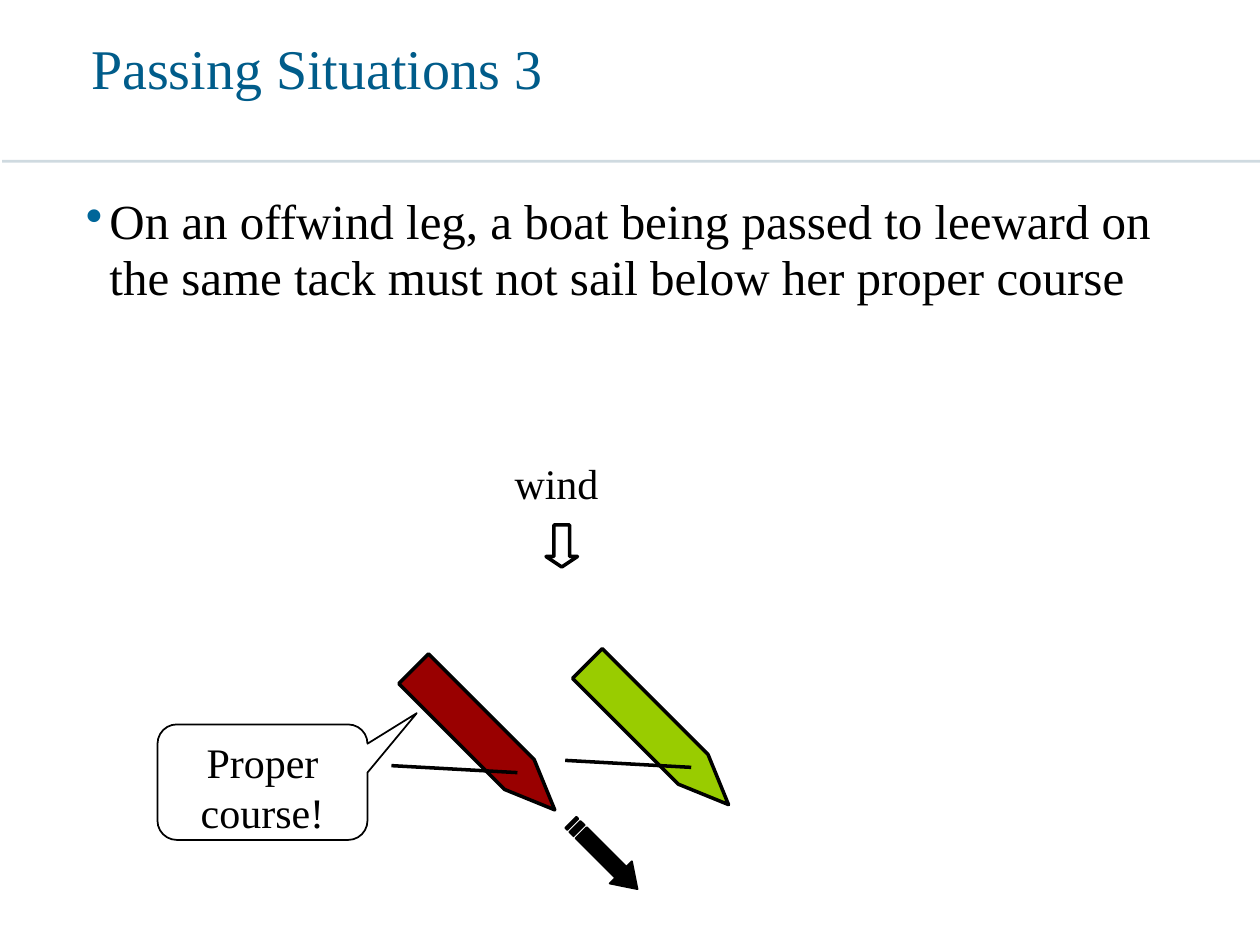
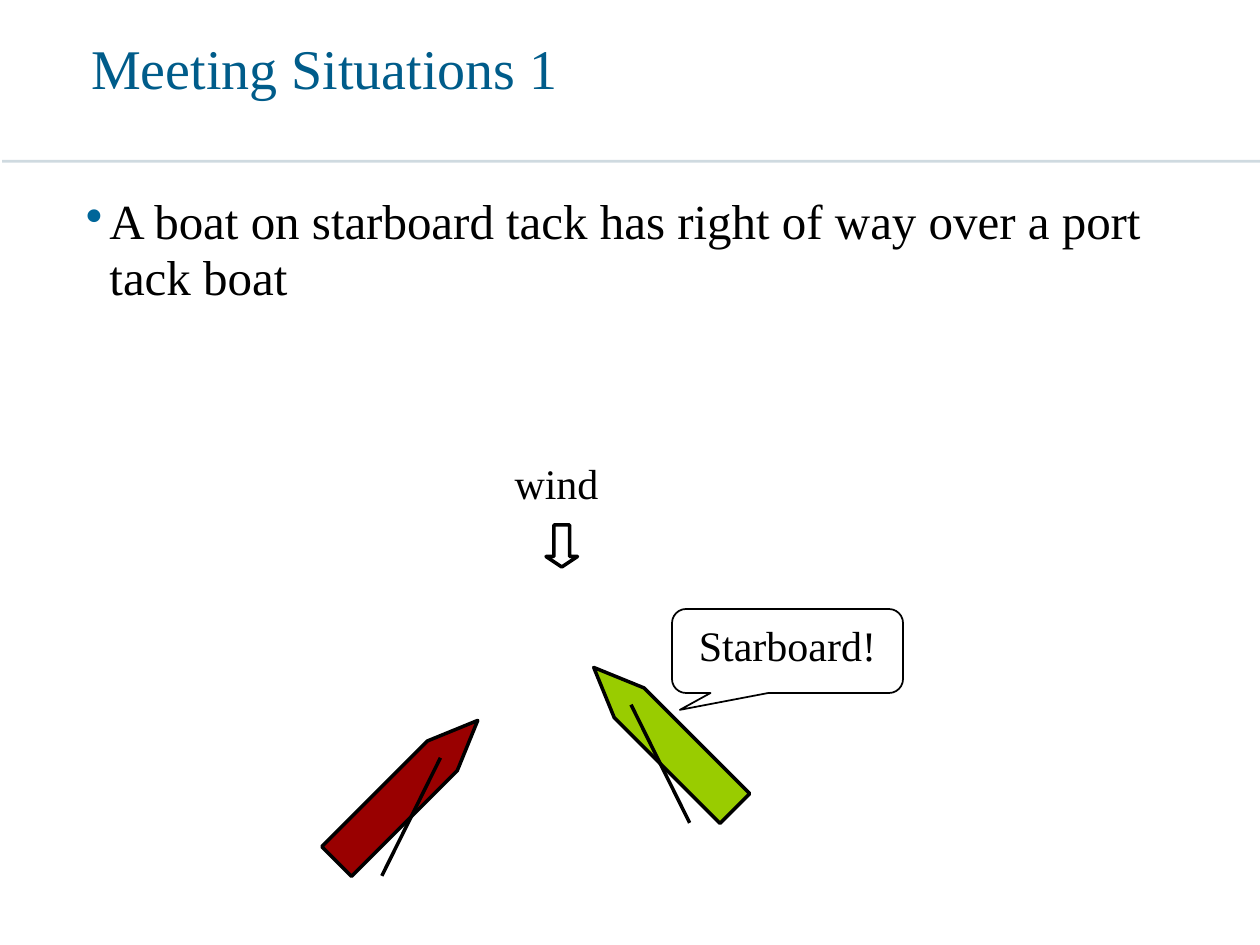
from typing import NamedTuple
from pptx import Presentation
from pptx.dml.color import RGBColor
from pptx.enum.shapes import MSO_SHAPE
from pptx.enum.text import MSO_ANCHOR, PP_ALIGN
from pptx.oxml.ns import qn
from pptx.util import Pt
from lxml.etree import SubElement

HUES = {"title": "005C8A", "bullet": "006699", "rule": "A1B7C3",
        "ink": "000000", "port": "990000", "star": "99CC00"}
FACE = "Times New Roman"
STYLES = {
    "title": {"size": Pt(32), "hue": "title", "para": {"line_spacing": 0.9}},
    "body": {"size": Pt(28), "hue": "ink", "para": {"line_spacing": 0.95}},
    "label": {"size": Pt(24), "hue": "ink", "para": {"alignment": PP_ALIGN.CENTER}},
}
FRAME = {"word_wrap": True, "vertical_anchor": MSO_ANCHOR.TOP,
         "margin_left": Pt(7.2), "margin_right": Pt(7.2),
         "margin_top": Pt(3.6), "margin_bottom": Pt(3.6)}

HULL = (114, 24)
# Sail ends, measured from the corner of the unturned hull
RUN = ((76, 31), (4, 27))
BEAT = ((76, -7), (42.5, 60.5))
BEAT_BACK = tuple((HULL[0] - x, y) for x, y in BEAT)


class Boat(NamedTuple):
    left: float
    top: float
    turn: float
    hue: str
    sail: tuple


class Call(NamedTuple):
    text: str
    box: tuple
    tail: tuple


class Scene(NamedTuple):
    title: str
    rule: str
    boats: tuple
    call: Call
    arrow: tuple = ()


SCENES = (
    Scene("Passing Situations 3",
          "On an offwind leg, a boat being passed to leeward on the same tack "
          "must not sail below her proper course",
          (Boat(319, 407.5, 45, "star", RUN), Boat(219.7, 410.5, 45, "port", RUN)),
          Call("Proper course!", (90, 414, 120, 66), (0.735, -0.598, 0.167)),
          (318.2, 480)),
    Scene("Meeting Situations 1",
          "A boat on starboard tack has right of way over a port tack boat",
          (Boat(175.7, 440, 315, "port", BEAT), Boat(322.6, 409.7, 225, "star", BEAT_BACK)),
          Call("Starboard!", (384, 348, 132, 48), (-0.466, 0.701, 0.167))),
)


def color(name: str) -> RGBColor:
    return RGBColor.from_string(HUES[name])


def write(shape, text: str, style: str):
    """Put one styled paragraph in a shape and return it."""
    look = STYLES[style]
    for key, value in FRAME.items():
        setattr(shape.text_frame, key, value)
    para = shape.text_frame.paragraphs[0]
    for key, value in look["para"].items():
        setattr(para, key, value)
    run = para.add_run()
    run.text = text
    for key, value in {"name": FACE, "size": look["size"]}.items():
        setattr(run.font, key, value)
    run.font.color.rgb = color(look["hue"])
    return para


def add_text(slide, box: tuple, text: str, style: str):
    return write(slide.shapes.add_textbox(*map(Pt, box)), text, style)


def paint(shape, width: float, fill: str = "") -> None:
    shape.shadow.inherit = False
    if fill:
        shape.fill.solid()
        shape.fill.fore_color.rgb = color(fill)
    else:
        shape.fill.background()
    shape.line.color.rgb = color("ink")
    shape.line.width = Pt(width)


def add_shape(slide, kind, box: tuple, adjust: tuple, width: float, fill: str = ""):
    shape = slide.shapes.add_shape(kind, *map(Pt, box))
    for i, value in enumerate(adjust):
        shape.adjustments[i] = value
    paint(shape, width, fill)
    return shape


def add_line(slide, start: tuple, end: tuple, hue: str, width: float):
    line = slide.shapes.add_connector(1, *map(Pt, start + end))
    line.line.color.rgb = color(hue)
    line.line.width = Pt(width)
    SubElement(line._element.spPr, qn("a:effectLst"))
    return line


def add_bullet(para) -> None:
    props = para._p.get_or_add_pPr()
    props.set("marL", str(Pt(13.5)))
    props.set("indent", str(-Pt(13.5)))
    tint = SubElement(props, qn("a:buClr"))
    SubElement(tint, qn("a:srgbClr")).set("val", HUES["bullet"])
    SubElement(props, qn("a:buChar")).set("char", "•")


def add_base(slide, scene: Scene) -> None:
    """Rule, title and bullet text."""
    line = add_line(slide, (1.2, 92.2), (720, 92.2), "rule", 1.55)
    tint = line._element.spPr.find(".//" + qn("a:srgbClr"))
    SubElement(tint, qn("a:alpha")).set("val", "50000")
    add_text(slide, (45, 20, 621, 72), scene.title, "title")
    add_bullet(add_text(slide, (42, 108, 662, 366), scene.rule, "body"))


def add_wind(slide) -> None:
    add_shape(slide, MSO_SHAPE.DOWN_ARROW, (312, 300, 18, 24), (0.5, 0.333), 2)
    add_text(slide, (270, 258, 96, 36), "wind", "label")


def add_boat(slide, boat: Boat) -> None:
    hull = add_shape(slide, MSO_SHAPE.PENTAGON, (boat.left, boat.top, *HULL),
                     (1.188,), 2, boat.hue)
    hull.rotation = boat.turn
    start, end = ((boat.left + x, boat.top + y) for x, y in boat.sail)
    add_line(slide, start, end, "ink", 2)


def add_call(slide, call: Call) -> None:
    shape = add_shape(slide, MSO_SHAPE.ROUNDED_RECTANGULAR_CALLOUT,
                      call.box, call.tail, 1)
    write(shape, call.text, "label")


def add_arrow(slide, left: float, top: float) -> None:
    """Striped arrow, 54 by 18, turned to the boats' heading."""
    def bar(a: float, b: float) -> list:
        return [(a, 4.5), (b, 4.5), (b, 13.5), (a, 13.5)]

    head = [(40.5, 4.5), (40.5, 0), (54, 9), (40.5, 18), (40.5, 13.5)]
    body = [(8.4, 4.5), *head, (8.4, 13.5)]
    parts = [[(Pt(left + x), Pt(top + y)) for x, y in part]
             for part in (body, bar(3.4, 6.8), bar(0, 1.7))]
    pen = slide.shapes.build_freeform(*parts[0][0])
    for i, part in enumerate(parts):
        if i:
            pen.move_to(*part[0])
        pen.add_line_segments(part[1:], close=True)
    shape = pen.convert_to_shape()
    shape.rotation = 45
    paint(shape, 1, "ink")


def main() -> None:
    deck = Presentation()
    deck.slide_width, deck.slide_height = Pt(720), Pt(540)
    for scene in SCENES:
        slide = deck.slides.add_slide(deck.slide_layouts[6])
        add_base(slide, scene)
        add_wind(slide)
        add_call(slide, scene.call)
        if scene.arrow:
            add_arrow(slide, *scene.arrow)
        for boat in scene.boats:
            add_boat(slide, boat)
    deck.save("out.pptx")


if __name__ == "__main__":
    main()
